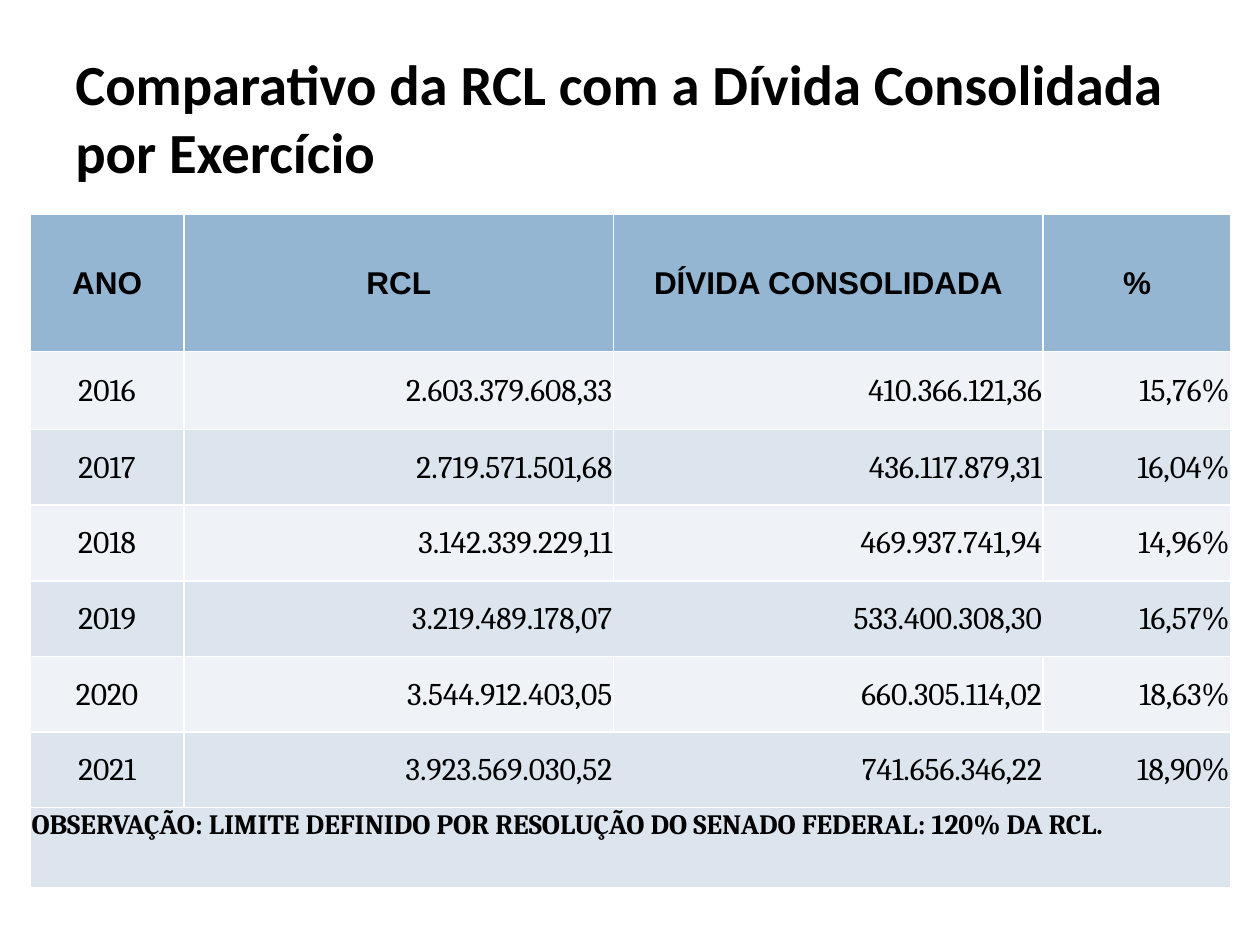
"""Build a slide comparing RCL with consolidated debt by year."""
from lxml import etree
from pptx import Presentation
from pptx.dml.color import RGBColor
from pptx.enum.text import MSO_ANCHOR, PP_ALIGN
from pptx.oxml.ns import qn
from pptx.util import Inches, Pt

LEFT, CENTER, RIGHT, JUSTIFY = PP_ALIGN.LEFT, PP_ALIGN.CENTER, PP_ALIGN.RIGHT, PP_ALIGN.JUSTIFY
TOP, MIDDLE = MSO_ANCHOR.TOP, MSO_ANCHOR.MIDDLE
HEADER_FILL, LIGHT_FILL, DARK_FILL = "94B6D2", "EFF3F7", "DCE5EE"
BORDER = "FFFFFF"


def write(frame, text, font="Cambria", size=18, bold=False, align=LEFT, anchor=MIDDLE, color="000000"):
    frame.word_wrap = True
    frame.vertical_anchor = anchor
    para = frame.paragraphs[0]
    para.alignment = align
    span = para.add_run()
    span.text = text
    span.font.name, span.font.size, span.font.bold = font, Pt(size), bold
    span.font.color.rgb = RGBColor.from_string(color)


def style_cell(cell, fill, hidden_sides=()):
    cell.margin_left = cell.margin_right = cell.margin_top = Inches(0.01)
    cell.margin_bottom = 0
    properties = cell._tc.get_or_add_tcPr()
    for side in ("lnL", "lnR", "lnT", "lnB"):
        line = etree.SubElement(properties, qn(f"a:{side}"), w=str(Pt(1)))
        if side in hidden_sides:
            etree.SubElement(line, qn("a:noFill"))
        else:
            solid = etree.SubElement(line, qn("a:solidFill"))
            etree.SubElement(solid, qn("a:srgbClr"), val=BORDER)
    cell.fill.solid()
    cell.fill.fore_color.rgb = RGBColor.from_string(fill)


headers = ["ANO", "RCL", "DÍVIDA CONSOLIDADA", "%"]
records = [
    ["2016", "2.603.379.608,33", "410.366.121,36", "15,76%"],
    ["2017", "2.719.571.501,68", "436.117.879,31", "16,04%"],
    ["2018", "3.142.339.229,11", "469.937.741,94", "14,96%"],
    ["2019", "3.219.489.178,07", "533.400.308,30", "16,57%"],
    ["2020", "3.544.912.403,05", "660.305.114,02", "18,63%"],
    ["2021", "3.923.569.030,52", "741.656.346,22", "18,90%"],
]
open_years = ("2019", "2021")
column_widths = [1.22, 3.41, 3.41, 1.49]
row_heights = [1.09, 0.62] + [0.6] * 5 + [0.64]

deck = Presentation()
deck.slide_width, deck.slide_height = Inches(10), Inches(7.5)
page = deck.slides.add_slide(deck.slide_layouts[6])

title = page.shapes.add_textbox(Inches(0.5), Inches(0.3), Inches(9), Inches(1.25))
write(title.text_frame, "Comparativo da RCL com a Dívida Consolidada por Exercício",
      font="Calibri", size=32.4, bold=True)

table = page.shapes.add_table(
    len(row_heights), len(column_widths), Inches(0.24), Inches(1.7),
    Inches(sum(column_widths)), Inches(sum(row_heights))).table
for column, width in zip(table.columns, column_widths):
    column.width = Inches(width)
for row, height in zip(table.rows, row_heights):
    row.height = Inches(height)

for index, header in enumerate(headers):
    cell = table.cell(0, index)
    style_cell(cell, HEADER_FILL)
    write(cell.text_frame, header, font="Arial", bold=True, align=CENTER)
    cell.vertical_anchor = MIDDLE

for number, record in enumerate(records, start=1):
    for index, value in enumerate(record):
        hidden_sides = []
        if record[0] in open_years:
            if index in (1, 2):
                hidden_sides.append("lnR")
            if index in (2, 3):
                hidden_sides.append("lnL")
        cell = table.cell(number, index)
        style_cell(cell, LIGHT_FILL if number % 2 else DARK_FILL, hidden_sides)
        write(cell.text_frame, value, align=RIGHT if index else CENTER)
        cell.vertical_anchor = MIDDLE

last_row = len(row_heights) - 1
note = table.cell(last_row, 0)
note.merge(table.cell(last_row, len(headers) - 1))
style_cell(note, DARK_FILL)
write(note.text_frame, "OBSERVAÇÃO: LIMITE DEFINIDO POR RESOLUÇÃO DO SENADO FEDERAL: 120% DA RCL.",
      size=16, bold=True, align=JUSTIFY, anchor=TOP)
note.vertical_anchor = TOP

deck.save("out.pptx")
